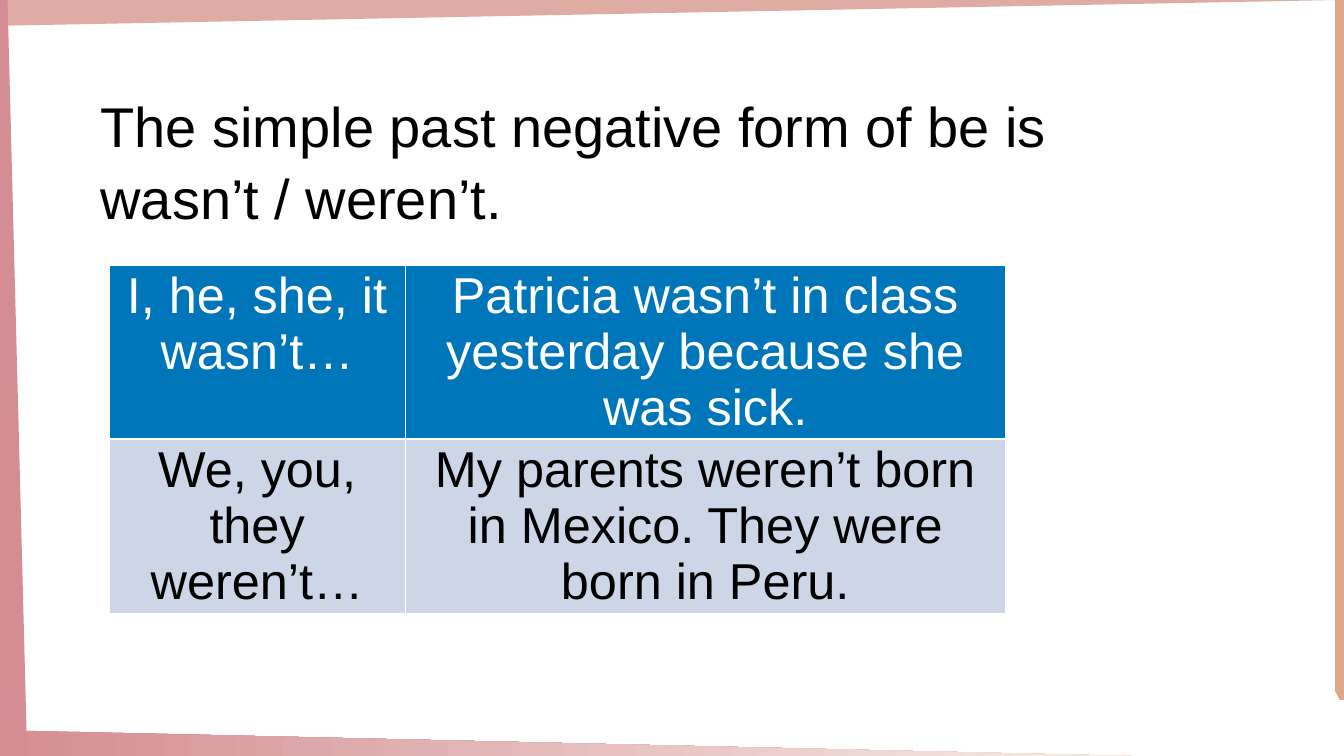
import dataclasses
import lxml.etree
import pptx
import pptx.dml.color
import pptx.enum.shapes
import pptx.enum.text
import pptx.oxml
import pptx.oxml.ns
import pptx.util

Cm = pptx.util.Cm
Pt = pptx.util.Pt
FONT = "Arial"
WIDE, HIGH = 67.74, 38.1
HUES = {
    "white": "FFFFFF", "black": "000000", "blue": "0076BA", "pale": "CCD6E7",
    "rose": "D48D93", "blush": "DEACA2", "cream": "F7EDE6", "sand": "DFA687",
}


@dataclasses.dataclass
class Patch:
    points: list[tuple[float, float]]
    hue: str
    fade: str = ""


@dataclasses.dataclass
class Row:
    texts: tuple[str, str]
    fill: str
    ink: str
    base: float


PATCHES = [
    Patch([(67.27, 0), (67.73, 0), (67.73, 35.27), (67.27, 35.27)], "sand"),
    Patch([(0, 0), (0, 1.3), (67.46, 0)], "blush"),
    Patch([(0, HIGH), (0, 36.8), (57.02, HIGH)], "rose", "cream"),
    Patch([(0, 0), (0, HIGH), (1.37, HIGH), (0.38, 0)], "rose"),
    Patch([(54.1, 32.94), (57.2, 32.94), (58.72, 30.33), (61.7, 30.33),
           (63.25, 33.02), (66.32, 32.94), (67.69, 35.61), (66.8, 37.29),
           (56.64, 37.29), (55.63, 35.53)], "white"),
]
ROWS = [
    Row(("I, he, she, it wasn’t…",
         "Patricia wasn’t in class yesterday because she was sick."),
        "blue", "white", 3),
    Row(("We, you, they weren’t…",
         "My parents weren’t born in Mexico. They were born in Peru."),
        "pale", "black", 1),
]
COLS = (14.94, 30.23)
TALL = 8.76
TITLE = ("The simple past negative form of be is", "wasn’t / weren’t.")


def tint(name: str) -> pptx.dml.color.RGBColor:
    """Return the named colour."""
    return pptx.dml.color.RGBColor.from_string(HUES[name])


def style(para, size: float, ink: str) -> None:
    """Set the font of a paragraph."""
    para.font.name = FONT
    para.font.size = Pt(size)
    para.font.color.rgb = tint(ink)


def draw_patch(slide, patch: Patch) -> None:
    """Draw one filled outline of the frame."""
    spots = [(Cm(x), Cm(y)) for x, y in patch.points]
    pen = slide.shapes.build_freeform(*spots[0])
    pen.add_line_segments(spots[1:], close=True)
    shape = pen.convert_to_shape()
    shape.shadow.inherit = False
    shape.line.fill.background()
    if patch.fade:
        shape.fill.gradient()
        shape.fill.gradient_angle = 0
        for stop, hue in zip(shape.fill.gradient_stops, (patch.hue, patch.fade)):
            stop.color.rgb = tint(hue)
    else:
        shape.fill.solid()
        shape.fill.fore_color.rgb = tint(patch.hue)


def edge(cell, base: float) -> None:
    """Give a cell white borders."""
    props = cell._tc.get_or_add_tcPr()
    qn = pptx.oxml.ns.qn
    for spot, (tag, width) in enumerate(
            (("a:lnL", 1), ("a:lnR", 1), ("a:lnT", 1), ("a:lnB", base))):
        line = lxml.etree.Element(qn(tag), w=str(Pt(width)))
        fill = lxml.etree.SubElement(line, qn("a:solidFill"))
        lxml.etree.SubElement(fill, qn("a:srgbClr"), val=HUES["white"])
        props.insert(spot, line)


def draw_table(slide, rows: list[Row]) -> None:
    """Draw the table of negative forms."""
    table = slide.shapes.add_table(
        len(rows), len(COLS), Cm(5.49), Cm(13.36),
        Cm(sum(COLS)), Cm(TALL * len(rows))).table
    for col, width in zip(table.columns, COLS):
        col.width = Cm(width)
    for line, row in zip(table.rows, rows):
        line.height = Cm(TALL)
        for cell, text in zip(line.cells, row.texts):
            cell.text = text
            cell.fill.solid()
            cell.fill.fore_color.rgb = tint(row.fill)
            edge(cell, row.base)
            para = cell.text_frame.paragraphs[0]
            para.alignment = pptx.enum.text.PP_ALIGN.CENTER
            style(para, 72, row.ink)


def draw_title(slide, lines: tuple[str, ...]) -> None:
    """Draw the heading."""
    frame = slide.shapes.add_textbox(
        Cm(4.57), Cm(4.14), Cm(57.51), Cm(7.34)).text_frame
    frame.word_wrap = True
    frame.margin_left = frame.margin_right = Cm(0.5)
    frame.margin_top = frame.margin_bottom = Cm(0.25)
    frame.text = "\n".join(lines)
    for para in frame.paragraphs:
        para.line_spacing = 1.07
        style(para, 80, "black")


def main() -> None:
    """Build and save the slide."""
    deck = pptx.Presentation()
    deck.slide_width, deck.slide_height = Cm(WIDE), Cm(HIGH)
    slide = deck.slides.add_slide(deck.slide_layouts[6])
    for patch in PATCHES:
        draw_patch(slide, patch)
    draw_table(slide, ROWS)
    draw_title(slide, TITLE)
    deck.save("out.pptx")


if __name__ == "__main__":
    main()
